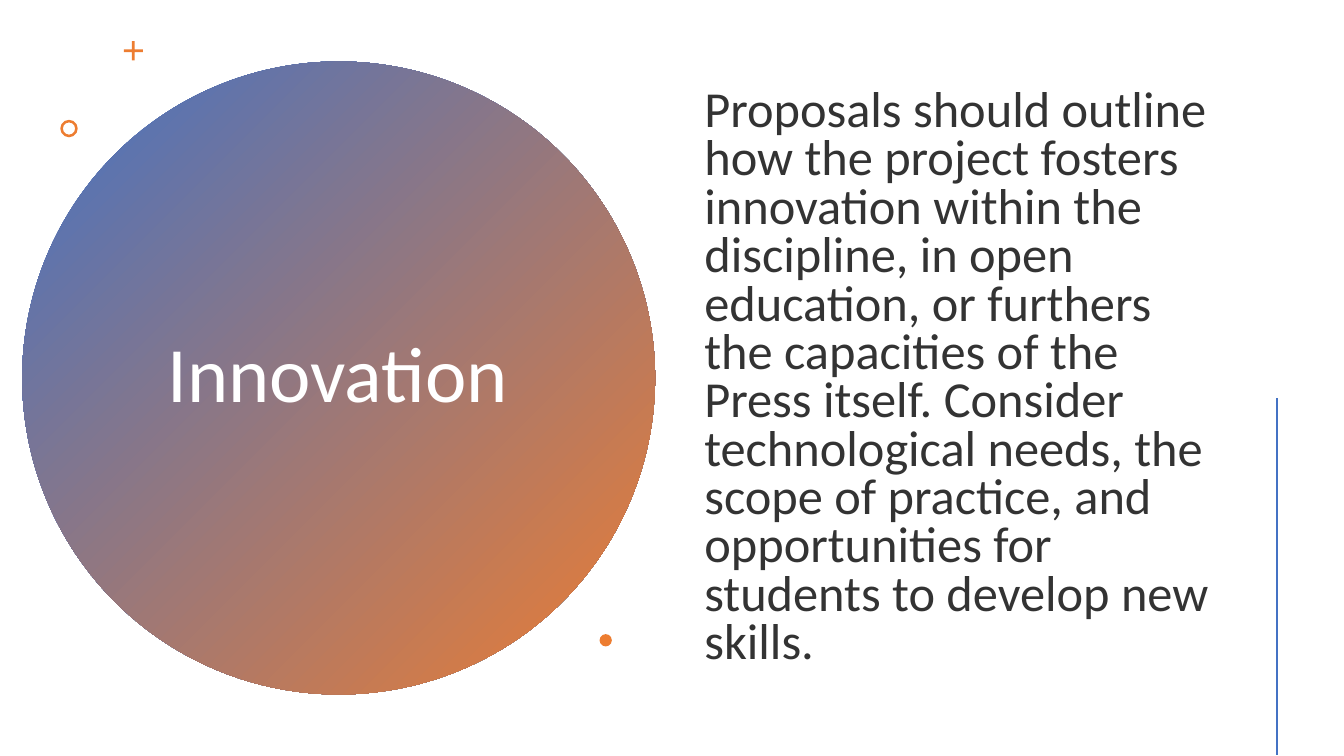
import pptx
import pptx.util
import pptx.dml.color
import pptx.enum.shapes
import pptx.enum.text
import pptx.oxml.ns
from lxml import etree

Cm = pptx.util.Cm
Pt = pptx.util.Pt
Kind = pptx.enum.shapes.MSO_SHAPE
Align = pptx.enum.text.PP_ALIGN

COLORS = {
    "blue": "4472C4",
    "orange": "ED7D31",
    "white": "FFFFFF",
    "dark": "333333",
}
FONT = "Calibri"
BODY = (
    "Proposals should outline how the project fosters innovation within the "
    "discipline, in open education, or furthers the capacities of the Press "
    "itself. Consider technological needs, the scope of practice, and "
    "opportunities for students to develop new skills."
)


def color(name):
    return pptx.dml.color.RGBColor.from_string(COLORS[name])


def place(shape, left, top, width, height):
    shape.left, shape.top = Cm(left), Cm(top)
    shape.width, shape.height = Cm(width), Cm(height)


def write(shape, text, size, shade, align, lead, gap):
    frame = shape.text_frame
    frame.text = text
    frame.word_wrap = True
    frame.auto_size = pptx.enum.text.MSO_AUTO_SIZE.NONE
    frame.vertical_anchor = pptx.enum.text.MSO_ANCHOR.MIDDLE
    para = frame.paragraphs[0]
    para.alignment = align
    para.line_spacing = lead
    para.space_before = Pt(gap)
    font = para.runs[0].font
    font.name = FONT
    font.size = Pt(size)
    font.color.rgb = color(shade)


def add_mark(slide, kind, left, top, size, ratio=None):
    mark = slide.shapes.add_shape(kind, Cm(left), Cm(top), Cm(size), Cm(size))
    mark.shadow.inherit = False
    mark.line.fill.background()
    mark.fill.solid()
    mark.fill.fore_color.rgb = color("orange")
    if ratio is not None:
        mark.adjustments[0] = ratio
    return mark


def add_disc(slide, left, top, size):
    disc = add_mark(slide, Kind.OVAL, left, top, size)
    disc.fill.gradient()
    disc.fill.gradient_angle = 315
    for stop, name in zip(disc.fill.gradient_stops, ("blue", "orange")):
        stop.color.rgb = color(name)
    return disc


def add_rule(slide, left, top, end):
    rule = slide.shapes.add_connector(
        pptx.enum.shapes.MSO_CONNECTOR.STRAIGHT,
        Cm(left), Cm(top), Cm(left), Cm(end))
    rule.line.color.rgb = color("blue")
    rule.line.width = Pt(2)
    etree.SubElement(rule._element.spPr, pptx.oxml.ns.qn("a:effectLst"))


def main():
    deck = pptx.Presentation()
    deck.slide_width, deck.slide_height = Cm(33.87), Cm(19.05)
    slide = deck.slides.add_slide(deck.slide_layouts[5])
    title = slide.shapes.title

    disc = add_disc(slide, 0.56, 1.55, 15.95)
    title._element.addprevious(disc._element)
    place(title, 3.45, 3.58, 10.13, 11.86)
    write(title, "Innovation", 56, "white", Align.CENTER, 0.9, 0)

    add_mark(slide, Kind.CROSS, 3.12, 1.04, 0.48, 0.43)
    add_mark(slide, Kind.DONUT, 1.52, 3.02, 0.44, 0.15)
    body = slide.shapes.add_textbox(Cm(17.5), Cm(1.45), Cm(13.26), Cm(16.21))
    write(body, BODY, 36, "dark", Align.LEFT, 0.8, 10)
    add_mark(slide, Kind.OVAL, 15.11, 15.98, 0.31)
    add_rule(slide, 32.18, 10.03, 19.03)

    deck.save("out.pptx")


if __name__ == "__main__":
    main()
